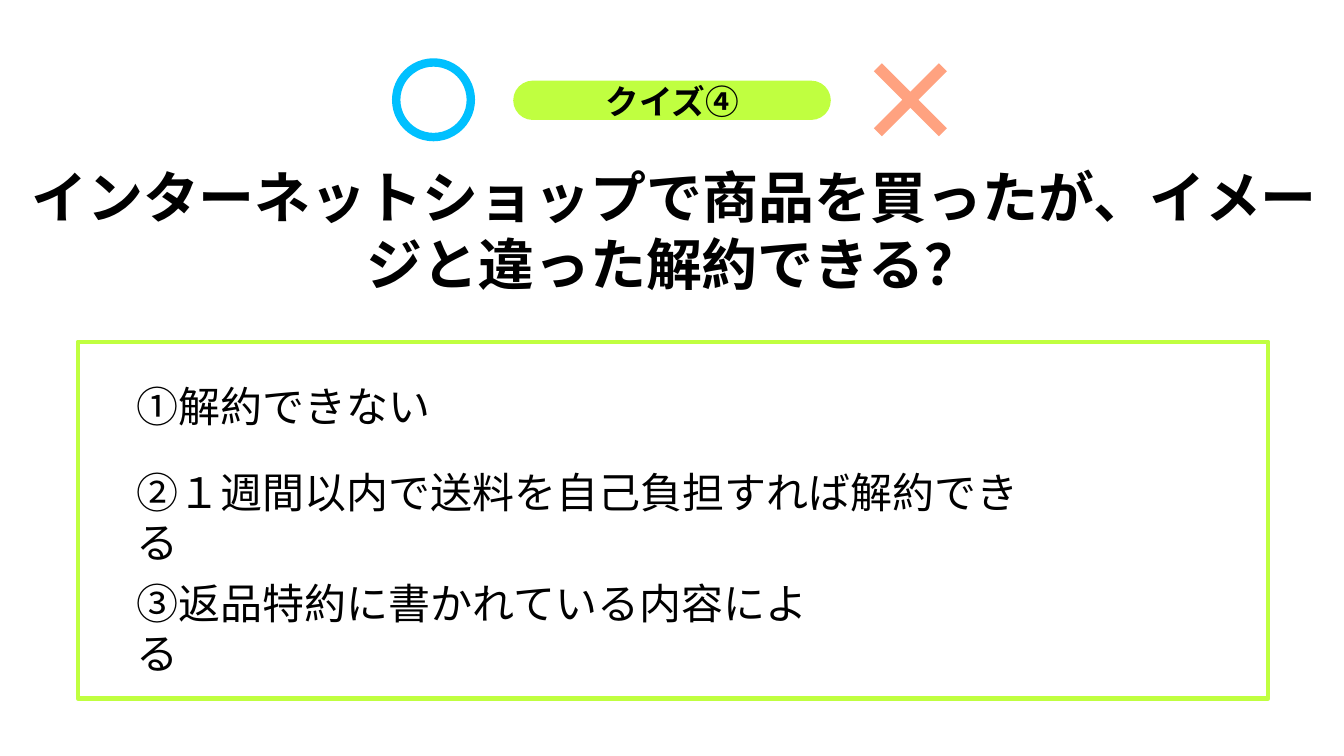
import pptx
import pptx.dml.color
import pptx.enum.shapes
import pptx.enum.text
import pptx.oxml
import pptx.oxml.ns
import pptx.util
from pptx.util import Inches

Kind = pptx.enum.shapes.MSO_SHAPE
Align = pptx.enum.text.PP_ALIGN
AutoSize = pptx.enum.text.MSO_AUTO_SIZE


def color(value):
    return pptx.dml.color.RGBColor.from_string(value)


class QuizSlide:
    FONT = "Noto Sans CJK JP"
    INK, LIME, BLUE, SALMON = "000000", "C0FF40", "00C0FF", "FFA280"

    def __init__(self, presentation):
        self.slide = presentation.slides.add_slide(presentation.slide_layouts[5])

    def shape(self, kind, box, fill=None, line=None, width=0, adjustment=None):
        shape = self.slide.shapes.add_shape(kind, *map(Inches, box))
        shape.shadow.inherit = False
        if adjustment is not None:
            shape.adjustments[0] = adjustment
        if fill:
            shape.fill.solid()
            shape.fill.fore_color.rgb = color(fill)
        else:
            shape.fill.background()
        if line:
            shape.line.color.rgb = color(line)
            shape.line.width = pptx.util.Pt(width)
        else:
            shape.line.fill.background()

    def add_text(self, shape, text, size, bold=False, align=Align.LEFT):
        """Put one run in the shape, with the font set for Japanese text too."""
        frame = shape.text_frame
        frame.word_wrap = True
        frame.vertical_anchor = pptx.enum.text.MSO_ANCHOR.MIDDLE
        paragraph = frame.paragraphs[0]
        paragraph.alignment = align
        run = paragraph.add_run()
        run.text = text
        font = run.font
        font.name, font.size, font.bold = self.FONT, pptx.util.Pt(size), bold
        font.color.rgb = color(self.INK)
        east_asian = pptx.oxml.parse_xml(
            f'<a:ea {pptx.oxml.ns.nsdecls("a")} typeface="{self.FONT}"/>')
        font._element.find(pptx.oxml.ns.qn("a:latin")).addnext(east_asian)
        return frame

    def heading(self, shape, text, size):
        """Centre bold text in the shape, without margins."""
        frame = self.add_text(shape, text, size, True, Align.CENTER)
        frame.margin_left = frame.margin_right = 0
        frame.margin_top = frame.margin_bottom = 0
        frame.auto_size = AutoSize.NONE

    def title(self, box, text):
        title = self.slide.shapes.title
        title.left, title.top, title.width, title.height = map(Inches, box)
        self.heading(title, text, 40)

    def label(self, box, text):
        self.heading(self.slide.shapes.add_textbox(*map(Inches, box)), text, 24)

    def answer(self, box, text):
        frame = self.add_text(self.slide.shapes.add_textbox(*map(Inches, box)), text, 30)
        frame.auto_size = AutoSize.SHAPE_TO_FIT_TEXT
        frame.paragraphs[0].space_after = pptx.util.Pt(6)


def main():
    presentation = pptx.Presentation()
    presentation.slide_width = Inches(13.33)
    presentation.slide_height = Inches(7.5)

    quiz = QuizSlide(presentation)
    quiz.shape(Kind.RECTANGLE, (0.77, 3.39, 11.81, 3.54), line=quiz.LIME, width=3)
    quiz.title((0.28, 1.49, 12.8, 1.57),
               "インターネットショップで商品を買ったが、イメージと違った解約できる？")
    quiz.shape(Kind.ROUNDED_RECTANGLE, (5.09, 0.8, 3.15, 0.39),
               fill=quiz.LIME, adjustment=0.5)
    quiz.label((4.7, 0.85, 3.94, 0.3), "クイズ④")
    quiz.shape(Kind.OVAL, (3.93, 0.62, 0.74, 0.74), line=quiz.BLUE, width=6)
    quiz.shape(Kind.MATH_MULTIPLY, (8.41, 0.37, 1.24, 1.24),
               fill=quiz.SALMON, adjustment=0.09)

    answers = [
        ("①解約できない", 4.72),
        ("②１週間以内で送料を自己負担すれば解約できる", 9.06),
        ("③返品特約に書かれている内容による", 7.09),
    ]
    for index, (text, width) in enumerate(answers):
        quiz.answer((1.26, 3.83 + 1.1 * index, width, 0.39), text)

    presentation.save("out.pptx")


if __name__ == "__main__":
    main()
